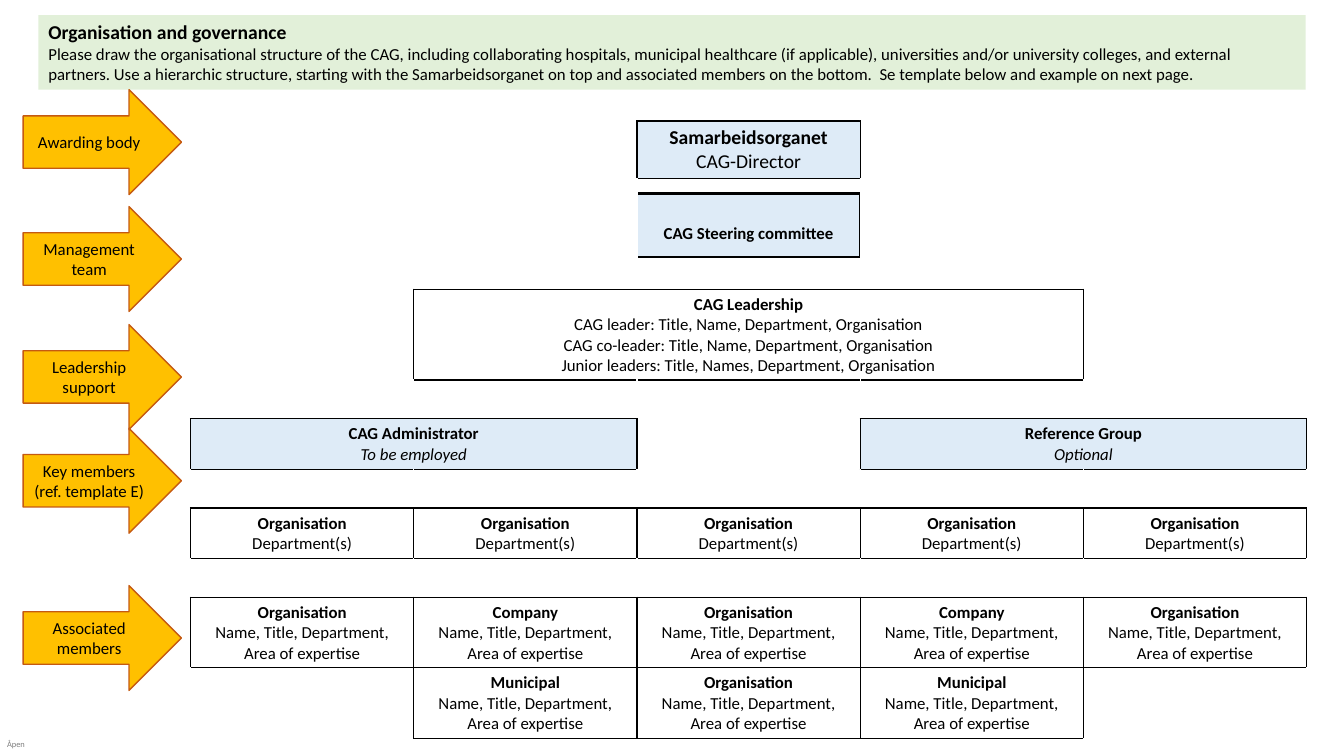
"""Builds the organisation and governance template slide."""
from dataclasses import dataclass

from lxml import etree
from pptx import Presentation
from pptx import util as u
from pptx.dml.color import RGBColor
from pptx.enum import shapes, text
from pptx.oxml.ns import qn


@dataclass(frozen=True)
class Theme:
    """Colours, font and type sizes of the slide."""
    font: str = "Calibri"
    ink: str = "000000"
    paper: str = "FFFFFF"
    muted: str = "7F7F7F"
    banner: str = "E2F0D9"
    box: str = "DEEBF7"
    arrow: str = "FFC000"
    arrow_edge: str = "C55A11"
    heading: int = 14
    body: int = 12
    label: int = 6


THEME = Theme()
WIDTH, HEIGHT = 13.33, 7.5
CHART_LEFT, CHART_TOP, COLUMN, COLUMNS = 1.89, 1.2, 2.214, 5
GAP = 0.385
ROWS = [0.57, 1.1, 0.9, GAP, 0.5, GAP, 0.5, GAP, 0.7, 0.7]
STEERING_ROW = 1
MEMBER = "Name, Title, Department, Area of expertise"
LEADERS = ["CAG leader: Title, Name, Department, Organisation",
           "CAG co-leader: Title, Name, Department, Organisation",
           "Junior leaders: Title, Names, Department, Organisation"]
ARROWS = {"Awarding body": 0.89, "Management team": 2.05, "Leadership support": 3.22,
          "Key members (ref. template E)": 4.25, "Associated members": 5.81}


@dataclass
class Unit:
    """One unit of the organisation and its place in the grid."""
    row: int
    column: int
    lines: list
    span: int = 1
    fill: str = ""
    size: int = THEME.body
    italic: bool = False


def organisation_units():
    """Return every unit from the top of the hierarchy to the bottom."""
    units = [
        Unit(0, 2, ["Samarbeidsorganet", "CAG-Director"], fill=THEME.box, size=THEME.heading),
        Unit(STEERING_ROW, 2, ["CAG Steering committee"]),
        Unit(2, 1, ["CAG Leadership", *LEADERS], span=3),
        Unit(4, 0, ["CAG Administrator", "To be employed"], 2, THEME.box, italic=True),
        Unit(4, 3, ["Reference Group", "Optional"], 2, THEME.box, italic=True),
    ]
    units += [Unit(6, column, ["Organisation", "Department(s)"]) for column in range(COLUMNS)]
    units += [Unit(8, column, [("Organisation", "Company")[column % 2], MEMBER])
              for column in range(COLUMNS)]
    units += [Unit(9, column, [("Organisation", "Municipal")[column % 2], MEMBER])
              for column in range(1, COLUMNS - 1)]
    return units


def box(left, top, width, height):
    """Return a position and size in inches as lengths."""
    return [u.Inches(value) for value in (left, top, width, height)]


def paint(shape, fill, line=None, line_width=1.0):
    """Give a shape a solid fill and an optional outline."""
    shape.fill.solid()
    shape.fill.fore_color.rgb = RGBColor.from_string(fill)
    if line:
        shape.line.color.rgb = RGBColor.from_string(line)
        shape.line.width = u.Pt(line_width)
    else:
        shape.line.fill.background()


def write(frame, lines, sizes, align, heading=False, italic=False, color=THEME.ink):
    """Write lines as paragraphs, the first one bold when it is a heading."""
    frame.text = "\n".join(lines)
    for index, paragraph in enumerate(frame.paragraphs):
        paragraph.alignment = align
        paragraph.line_spacing = 1.0
        for run in paragraph.runs:
            run.font.name = THEME.font
            run.font.size = u.Pt(sizes[min(index, len(sizes) - 1)])
            run.font.bold = heading and index == 0
            run.font.italic = italic and index > 0
            run.font.color.rgb = RGBColor.from_string(color)


def add_banner(slide):
    """Turn the title placeholder into the banner with the instructions."""
    banner = slide.shapes.title
    banner.left, banner.top, banner.width, banner.height = box(0.38, 0.15, 12.57, 0.74)
    paint(banner, THEME.banner)
    frame = banner.text_frame
    frame.word_wrap = True
    frame.auto_size = text.MSO_AUTO_SIZE.NONE
    frame.vertical_anchor = text.MSO_ANCHOR.TOP
    instructions = (
        "Please draw the organisational structure of the CAG, including collaborating hospitals, "
        "municipal healthcare (if applicable), universities and/or university colleges, and "
        "external partners. Use a hierarchic structure, starting with the Samarbeidsorganet on "
        "top and associated members on the bottom.  Se template below and example on next page.")
    write(frame, ["Organisation and governance", instructions],
          [THEME.heading, THEME.body], text.PP_ALIGN.LEFT, heading=True)


def add_steering_box(slide):
    """Draw the box that lies behind the steering committee cell."""
    left = CHART_LEFT + 2 * COLUMN
    shape = slide.shapes.add_shape(shapes.MSO_SHAPE.RECTANGLE, *box(left, 1.92, COLUMN, 0.63))
    shape.shadow.inherit = False
    paint(shape, THEME.box, THEME.ink, 1.5)


def set_borders(cell, colors):
    """Draw the left, right, top and bottom borders of a cell."""
    properties = cell._tc.get_or_add_tcPr()
    for index, (side, color) in enumerate(zip("LRTB", colors)):
        line = etree.Element(qn(f"a:ln{side}"), w=str(u.Pt(1)))
        fill = etree.SubElement(line, qn("a:solidFill"))
        etree.SubElement(fill, qn("a:srgbClr"), val=color)
        properties.insert(index, line)


def add_hierarchy(slide, units):
    """Lay out the units in a table with black edges around occupied cells."""
    frame = slide.shapes.add_table(
        len(ROWS), COLUMNS, *box(CHART_LEFT, CHART_TOP, COLUMNS * COLUMN, sum(ROWS)))
    table = frame.table
    table.first_row = table.horz_banding = False
    for column in table.columns:
        column.width = u.Inches(COLUMN)
    for row, height in zip(table.rows, ROWS):
        row.height = u.Inches(height)

    outlined = {(unit.row, unit.column + step) for unit in units
                if unit.row != STEERING_ROW for step in range(unit.span)}
    for row in range(len(ROWS)):
        for column in range(COLUMNS):
            cell = table.cell(row, column)
            cell.fill.background()
            write(cell.text_frame, [], [THEME.body], text.PP_ALIGN.CENTER)
            cell.text_frame.paragraphs[0].font.size = u.Pt(THEME.body)
            neighbours = [(row, column - 1), (row, column + 1),
                          (row - 1, column), (row + 1, column)]
            set_borders(cell, [THEME.ink if outlined & {(row, column), neighbour}
                               else THEME.paper for neighbour in neighbours])

    for unit in units:
        cell = table.cell(unit.row, unit.column)
        if unit.span > 1:
            cell.merge(table.cell(unit.row, unit.column + unit.span - 1))
        if unit.fill:
            cell.fill.solid()
            cell.fill.fore_color.rgb = RGBColor.from_string(unit.fill)
        if unit.row == STEERING_ROW:
            cell.vertical_anchor = text.MSO_ANCHOR.MIDDLE
        write(cell.text_frame, unit.lines, [unit.size], text.PP_ALIGN.CENTER,
              heading=True, italic=unit.italic)


def add_level_arrow(slide, label, top):
    """Add the arrow that names one level of the hierarchy."""
    arrow = slide.shapes.add_shape(shapes.MSO_SHAPE.RIGHT_ARROW, *box(0.23, top, 1.57, 1.04))
    arrow.shadow.inherit = False
    paint(arrow, THEME.arrow, THEME.arrow_edge)
    arrow.text_frame.word_wrap = True
    arrow.text_frame.vertical_anchor = text.MSO_ANCHOR.MIDDLE
    write(arrow.text_frame, [label], [THEME.body], text.PP_ALIGN.CENTER)


def add_classification(slide):
    """Add the small classification label in the bottom corner."""
    frame = slide.shapes.add_textbox(*box(0.07, 7.33, 0.2, 0.1)).text_frame
    frame.margin_left = frame.margin_right = frame.margin_top = frame.margin_bottom = 0
    write(frame, ["Åpen"], [THEME.label], text.PP_ALIGN.LEFT, color=THEME.muted)


def main():
    """Build and save the slide."""
    presentation = Presentation()
    presentation.slide_width, presentation.slide_height = u.Inches(WIDTH), u.Inches(HEIGHT)
    slide = presentation.slides.add_slide(presentation.slide_layouts[5])
    add_banner(slide)
    add_classification(slide)
    add_steering_box(slide)
    add_hierarchy(slide, organisation_units())
    for label, top in ARROWS.items():
        add_level_arrow(slide, label, top)
    presentation.save("out.pptx")


if __name__ == "__main__":
    main()
